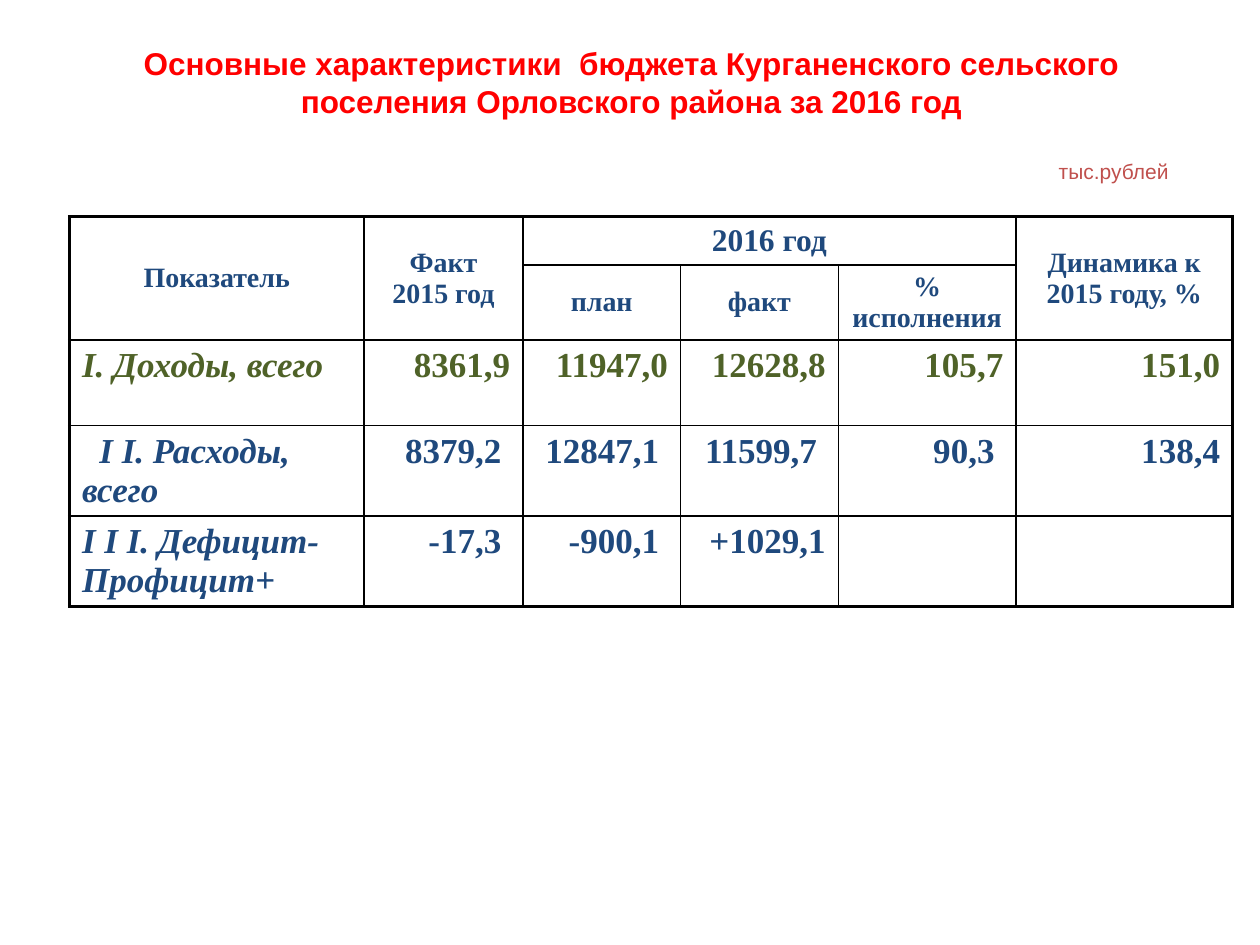
from pptx import Presentation
from pptx.dml.color import RGBColor
from pptx.enum.text import MSO_ANCHOR as Anchor, MSO_AUTO_SIZE as AutoSize, PP_ALIGN as Align
from pptx.oxml.ns import qn
from pptx.util import Cm, Pt
from lxml.etree import SubElement

NAVY, GREEN, RED, BRICK, BLACK = "1F497D", "4F6228", "FF0000", "C0504D", "000000"
THIN, THICK = 1, 2.25


def color(code):
    return RGBColor.from_string(code)


class BudgetPage:
    title_font = "Arial"
    table_font = "Times New Roman"

    def __init__(self, deck):
        self.page = deck.slides.add_slide(deck.slide_layouts[5])

    def style(self, para, font, size, code, align, bold=True, italic=False, before=0):
        para.alignment = align
        para.space_before = Pt(before)
        para.font.name = font
        para.font.size = Pt(size)
        para.font.bold = bold
        para.font.italic = italic
        para.font.color.rgb = color(code)

    def title(self, heading, unit):
        box = self.page.shapes.title
        box.left, box.top, box.width, box.height = Cm(1.3), Cm(0.71), Cm(22.86), Cm(3.18)
        frame = box.text_frame
        frame.word_wrap = True
        frame.auto_size = AutoSize.NONE
        frame.vertical_anchor = Anchor.MIDDLE
        frame.margin_left = frame.margin_right = Cm(0.6)
        para = frame.paragraphs[0]
        para.text = heading
        self.style(para, self.title_font, 18, RED, Align.CENTER)
        para = frame.add_paragraph()
        para.text = unit
        self.style(para, self.title_font, 12, BRICK, Align.RIGHT, bold=False, before=22)

    def table(self, left, top, widths, heights):
        frame = self.page.shapes.add_table(len(heights), len(widths), Cm(left), Cm(top),
                                           Cm(sum(widths)), Cm(sum(heights)))
        grid = frame.table
        grid.first_row = grid.horz_banding = False
        for column, width in zip(grid.columns, widths):
            column.width = Cm(width)
        for row, height in zip(grid.rows, heights):
            row.height = Cm(height)
        last_row, last_column = len(heights) - 1, len(widths) - 1
        for r in range(len(heights)):
            for c in range(len(widths)):
                outer = {"L": c == 0, "R": c == last_column, "T": r == 0, "B": r == last_row}
                self.borders(grid.cell(r, c), outer)
        return grid

    def borders(self, cell, outer):
        props = cell._tc.get_or_add_tcPr()
        for side, is_outer in outer.items():
            line = SubElement(props, qn(f"a:ln{side}"), w=str(Pt(THICK if is_outer else THIN)))
            fill = SubElement(line, qn("a:solidFill"))
            SubElement(fill, qn("a:srgbClr"), val=BLACK)
        cell.fill.background()

    def header(self, grid, row, column, text, rows=1, columns=1, size=16):
        cell = grid.cell(row, column)
        if rows * columns > 1:
            cell.merge(grid.cell(row + rows - 1, column + columns - 1))
        cell.text = text
        cell.vertical_anchor = Anchor.MIDDLE
        self.style(cell.text_frame.paragraphs[0], self.table_font, size, NAVY,
                   Align.CENTER, before=4.3)

    def data_row(self, grid, row, code, indent, texts):
        for column, text in enumerate(texts):
            cell = grid.cell(row, column)
            cell.text = text
            para = cell.text_frame.paragraphs[0]
            is_label = column == 0
            self.style(para, self.table_font, 20, code, Align.LEFT if is_label else Align.RIGHT,
                       italic=is_label, before=4.8)
            if is_label and indent:
                para._p.get_or_add_pPr().set("indent", str(Cm(indent)))


def main():
    deck = Presentation()
    deck.slide_width, deck.slide_height = Cm(25.4), Cm(19.05)
    budget = BudgetPage(deck)

    # Heading and unit of measure
    budget.title("Основные характеристики  бюджета Курганенского сельского "
                 "поселения Орловского района за 2016 год", "тыс.рублей")

    # Table grid
    grid = budget.table(1.4, 4.37, [5.94, 3.2, 3.18, 3.18, 3.58, 4.37],
                        [0.97, 1.51, 1.73, 1.82, 1.82])

    # Two-level header
    budget.header(grid, 0, 0, "Показатель", rows=2)
    budget.header(grid, 0, 1, "Факт 2015\u00a0год", rows=2)
    budget.header(grid, 0, 2, "2016 год", columns=3, size=18)
    budget.header(grid, 0, 5, "Динамика к 2015 году, %", rows=2)
    for column, text in enumerate(["план", "факт", "% исполнения"], start=2):
        budget.header(grid, 1, column, text)

    # Figures: colour, first-line indent, cells
    figures = [
        (GREEN, 0, ["I. Доходы, всего", "8361,9", "11947,0", "12628,8", "105,7", "151,0"]),
        (NAVY, 0.35, ["I I. Расходы, всего", "8379,2 ", "12847,1 ", "11599,7 ", "90,3 ", "138,4"]),
        (NAVY, 0, ["I I I. Дефицит-Профицит+", "-17,3 ", "-900,1 ", "+1029,1", "", ""]),
    ]
    for row, (code, indent, texts) in enumerate(figures, start=2):
        budget.data_row(grid, row, code, indent, texts)

    deck.save("out.pptx")


if __name__ == "__main__":
    main()
